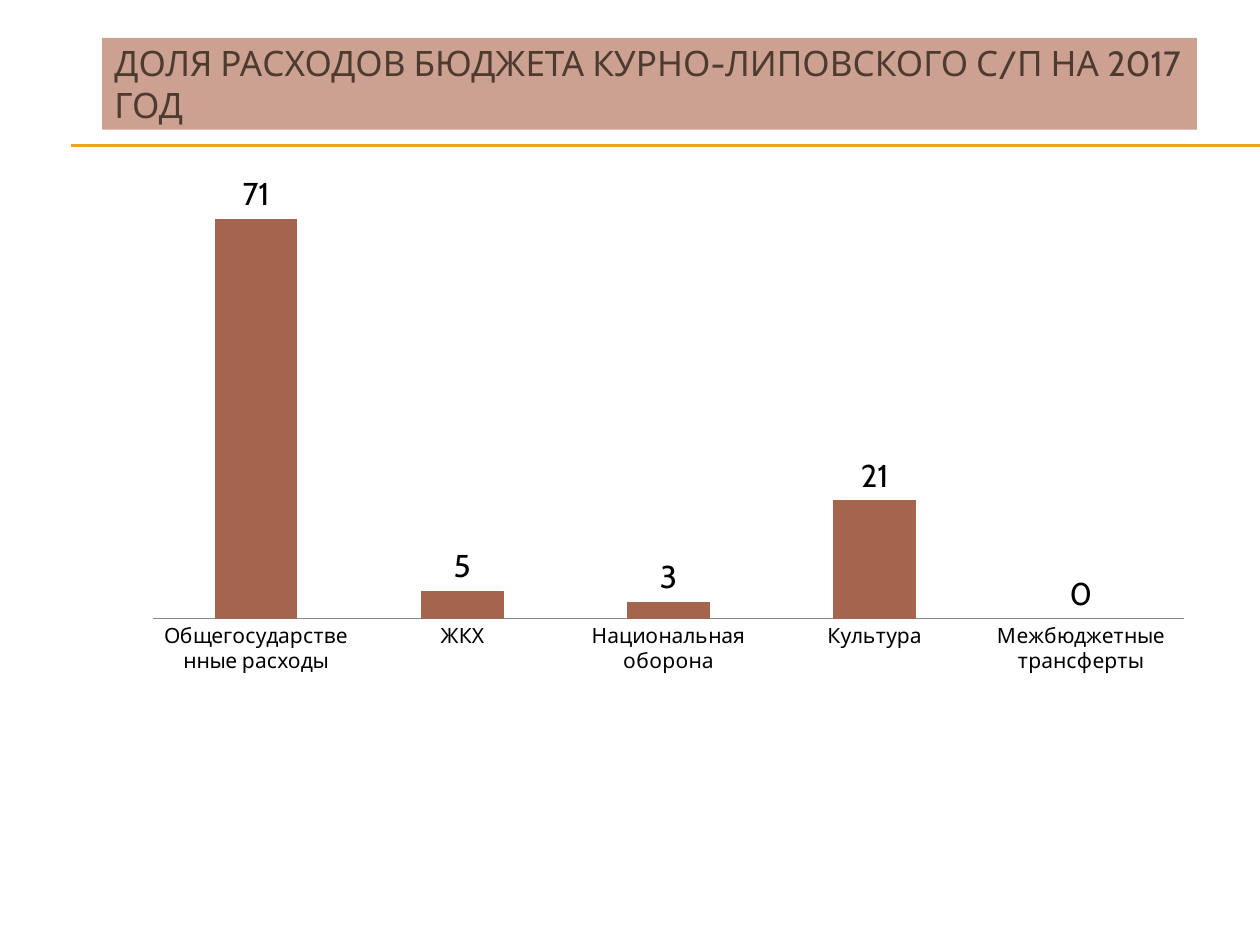
from lxml import etree
from pptx import Presentation
from pptx.chart.data import CategoryChartData
from pptx.dml.color import RGBColor
from pptx.enum.chart import XL_CHART_TYPE, XL_LABEL_POSITION, XL_TICK_MARK
from pptx.enum.shapes import MSO_CONNECTOR, MSO_SHAPE
from pptx.enum.text import MSO_ANCHOR, PP_ALIGN
from pptx.oxml.ns import qn
from pptx.util import Inches, Pt

COLUMNS = XL_CHART_TYPE.COLUMN_CLUSTERED
OUTSIDE = XL_LABEL_POSITION.OUTSIDE_END
NO_TICKS = XL_TICK_MARK.NONE
STRAIGHT = MSO_CONNECTOR.STRAIGHT
RECTANGLE = MSO_SHAPE.RECTANGLE
MIDDLE = MSO_ANCHOR.MIDDLE
LEFT = PP_ALIGN.LEFT

FONT = "Cabin"
TITLE = "ДОЛЯ РАСХОДОВ БЮДЖЕТА КУРНО-ЛИПОВСКОГО С/П НА 2017 ГОД"
EXPENSES = [
    ("Общегосударственные расходы", 71),
    ("ЖКХ", 5),
    ("Национальная оборона", 3),
    ("Культура", 21),
    ("Межбюджетные трансферты", 0),
]
RULES = [1.15, 1.16]
PLOT_AREA = {"x": 0.127, "y": 0.026, "w": 0.856, "h": 0.565}


def color(value):
    return RGBColor.from_string(value)


def style_font(font, size, value):
    font.name = FONT
    font.size = Pt(size)
    font.color.rgb = color(value)


def add_rule(page, top):
    rule = page.shapes.add_connector(
        STRAIGHT, Inches(0.56), Inches(top), Inches(10), Inches(top))
    rule.line.color.rgb = color("F0A22E")
    rule.line.width = Pt(0.75)
    etree.SubElement(rule._element.spPr, qn("a:effectLst"))


def add_title(page):
    box = page.shapes.add_shape(
        RECTANGLE, Inches(0.81), Inches(0.3), Inches(8.69), Inches(0.73))
    box.shadow.inherit = False
    box.fill.solid()
    box.fill.fore_color.rgb = color("CCA192")
    box.line.fill.background()
    frame = box.text_frame
    frame.word_wrap = True
    frame.vertical_anchor = MIDDLE
    para = frame.paragraphs[0]
    para.alignment = LEFT
    span = para.add_run()
    span.text = TITLE
    style_font(span.font, 20, "4E3B30")


def place_plot(chart):
    plot_area = chart._chartSpace.chart.plotArea
    for old in plot_area.findall(qn("c:layout")):
        plot_area.remove(old)
    layout = etree.Element(qn("c:layout"))
    manual = etree.SubElement(layout, qn("c:manualLayout"))
    settings = {"layoutTarget": "inner", "xMode": "edge", "yMode": "edge", **PLOT_AREA}
    for name, value in settings.items():
        etree.SubElement(manual, qn(f"c:{name}")).set("val", str(value))
    plot_area.insert(0, layout)


def add_expense_chart(page):
    data = CategoryChartData()
    data.categories = [name for name, share in EXPENSES]
    data.add_series("Series 1", [share for name, share in EXPENSES])
    chart = page.shapes.add_chart(
        COLUMNS, Inches(0), Inches(1.17), Inches(9.56), Inches(6.33), data).chart
    chart.has_title = False
    chart.has_legend = False
    style_font(chart.font, 18, "000000")
    place_plot(chart)

    values = chart.value_axis
    values.minimum_scale, values.maximum_scale = 0, 80
    values.has_major_gridlines = False
    values.visible = False
    categories = chart.category_axis
    categories.major_tick_mark = NO_TICKS
    categories.format.line.color.rgb = color("868686")
    style_font(categories.tick_labels.font, 12, "000000")

    plot = chart.plots[0]
    plot.vary_by_categories = False
    plot.gap_width = 150
    series = plot.series[0]
    series.format.fill.solid()
    series.format.fill.fore_color.rgb = color("A5644E")
    labels = series.data_labels
    labels.show_value = True
    labels.position = OUTSIDE
    style_font(labels.font, 18, "000000")


def main():
    """Build the budget expense slide."""
    deck = Presentation()
    deck.slide_width, deck.slide_height = Inches(10), Inches(7.5)
    page = deck.slides.add_slide(deck.slide_layouts[6])
    for top in RULES:
        add_rule(page, top)
    add_title(page)
    add_expense_chart(page)
    deck.save("out.pptx")


if __name__ == "__main__":
    main()
